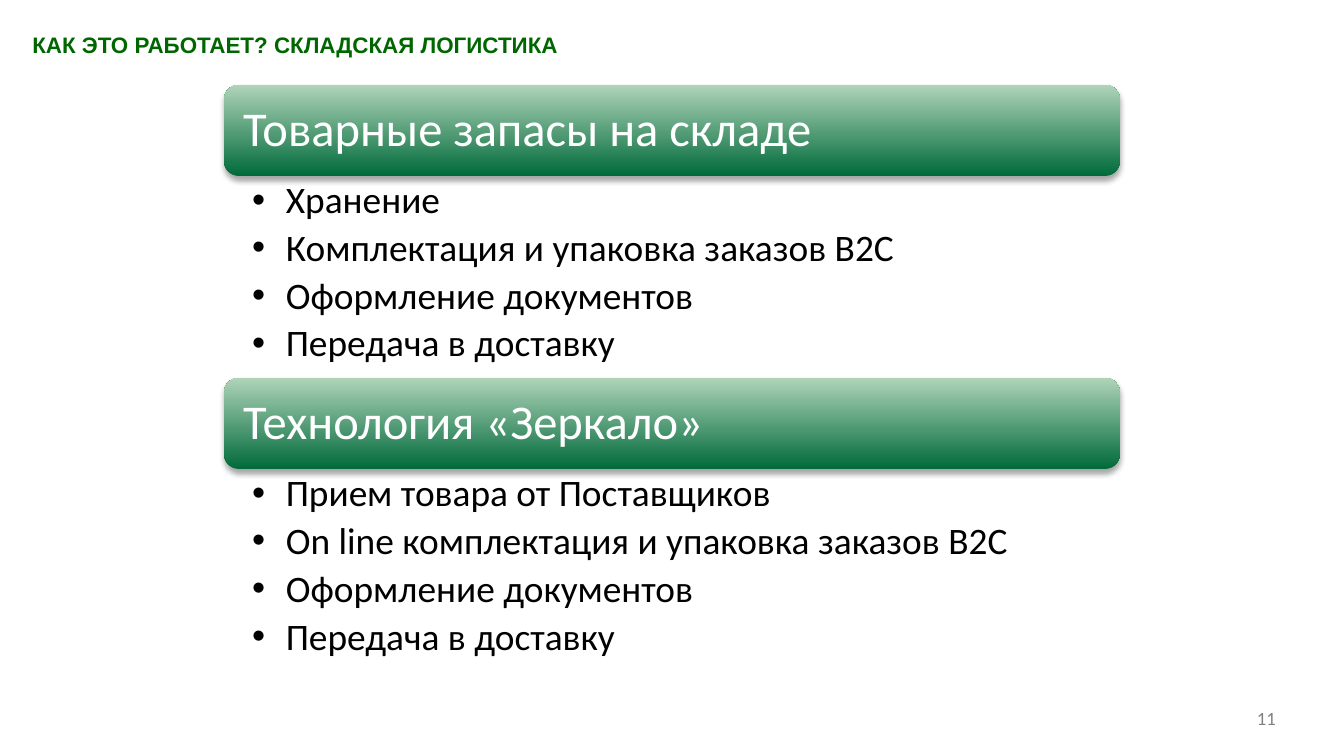
"""Build the warehouse logistics slide with two headed bullet lists."""
from lxml import etree
from pptx import Presentation
from pptx.dml.color import RGBColor
from pptx.enum.shapes import MSO_SHAPE as Shape
from pptx.enum.text import MSO_ANCHOR as Anchor, PP_ALIGN as Align
from pptx.oxml.ns import qn
from pptx.util import Inches, Pt

TITLE_GREEN = RGBColor(0x00, 0x66, 0x00)
DARK_GREEN = RGBColor(0x00, 0x6A, 0x3B)
LIGHT_GREEN = RGBColor(0xB0, 0xD4, 0xB9)
WHITE = RGBColor(0xFF, 0xFF, 0xFF)
BLACK = RGBColor(0x00, 0x00, 0x00)
GRAY = RGBColor(0x80, 0x80, 0x80)

WIDTH = 10
HEIGHT = WIDTH * 9 / 16
COLUMN_WIDTH = WIDTH * 2 / 3
COLUMN_LEFT = (WIDTH - COLUMN_WIDTH) / 2
TOP, HEADER_HEIGHT, LIST_HEIGHT = 0.63, 0.68, 1.5

SECTIONS = [
    ("Товарные запасы на складе", [
        "Хранение",
        "Комплектация и упаковка заказов В2С",
        "Оформление документов",
        "Передача в доставку",
    ]),
    ("Технология «Зеркало»", [
        "Прием товара от Поставщиков",
        "On line комплектация и упаковка заказов В2С",
        "Оформление документов",
        "Передача в доставку",
    ]),
]


def inches(*lengths):
    return [Inches(length) for length in lengths]


def set_margins(frame, left, top, right, bottom):
    frame.margin_left, frame.margin_top, frame.margin_right, frame.margin_bottom = inches(
        left, top, right, bottom)


def format_text(para, size, color, name="Calibri", bold=False, align=Align.LEFT):
    para.alignment = align
    for span in para.runs:
        font = span.font
        font.name, font.size, font.bold = name, Pt(size), bold
        font.color.rgb = color


def add_soft_shadow(shape):
    shape.shadow.inherit = False
    effects = shape._element.spPr.find(qn("a:effectLst"))
    shadow = etree.SubElement(effects, qn("a:outerShdw"), blurRad=str(Pt(3.1)),
                              dist=str(Pt(1.8)), dir="5400000", rotWithShape="0")
    color = etree.SubElement(shadow, qn("a:srgbClr"), val="000000")
    etree.SubElement(color, qn("a:alpha"), val="35000")


def add_bullet(para):
    properties = para._p.get_or_add_pPr()
    properties.set("marL", str(Inches(0.25)))
    properties.set("indent", str(Inches(-0.25)))
    etree.SubElement(properties, qn("a:buFont"), typeface="Arial")
    etree.SubElement(properties, qn("a:buChar"), char="•")


def set_title(page, text):
    title = page.shapes.title
    title.left, title.top, title.width, title.height = inches(0.14, 0.18, 6.79, 0.5)
    frame = title.text_frame
    frame.text = text
    frame.vertical_anchor = Anchor.TOP
    format_text(frame.paragraphs[0], 12, TITLE_GREEN, "Arial", True)


def add_header(page, text, top):
    header = page.shapes.add_shape(
        Shape.ROUNDED_RECTANGLE, *inches(COLUMN_LEFT, top, COLUMN_WIDTH, HEADER_HEIGHT))
    header.line.fill.background()
    header.fill.gradient()
    header.fill.gradient_angle = 90
    for stop, color in zip(header.fill.gradient_stops, (DARK_GREEN, LIGHT_GREEN)):
        stop.color.rgb = color
    add_soft_shadow(header)
    frame = header.text_frame
    frame.text = text
    frame.vertical_anchor = Anchor.MIDDLE
    set_margins(frame, 0.11, 0.11, 0.11, 0.11)
    para = frame.paragraphs[0]
    para.line_spacing = 0.9
    format_text(para, 26, WHITE)


def add_list(page, items, top):
    box = page.shapes.add_textbox(*inches(COLUMN_LEFT, top, COLUMN_WIDTH, LIST_HEIGHT))
    frame = box.text_frame
    frame.word_wrap = True
    set_margins(frame, 0.21, 0.04, 0.2, 0.04)
    frame.text = "\n".join(items)
    for para in frame.paragraphs:
        add_bullet(para)
        para.level = 1
        para.line_spacing, para.space_after = 0.9, Pt(4)
        format_text(para, 20, BLACK)


def add_page_number(page, number):
    box = page.shapes.add_textbox(*inches(8.37, 5.21, 1.22, 0.3))
    frame = box.text_frame
    frame.word_wrap = True
    frame.text = number
    format_text(frame.paragraphs[0], 10, GRAY, align=Align.RIGHT)


def main():
    deck = Presentation()
    deck.slide_width, deck.slide_height = inches(WIDTH, HEIGHT)
    page = deck.slides.add_slide(deck.slide_layouts[5])
    set_title(page, "КАК ЭТО РАБОТАЕТ? СКЛАДСКАЯ ЛОГИСТИКА")
    for row, (heading, items) in enumerate(SECTIONS):
        top = TOP + row * (HEADER_HEIGHT + LIST_HEIGHT)
        add_header(page, heading, top)
        add_list(page, items, top + HEADER_HEIGHT)
    add_page_number(page, "11")
    deck.save("out.pptx")


if __name__ == "__main__":
    main()
